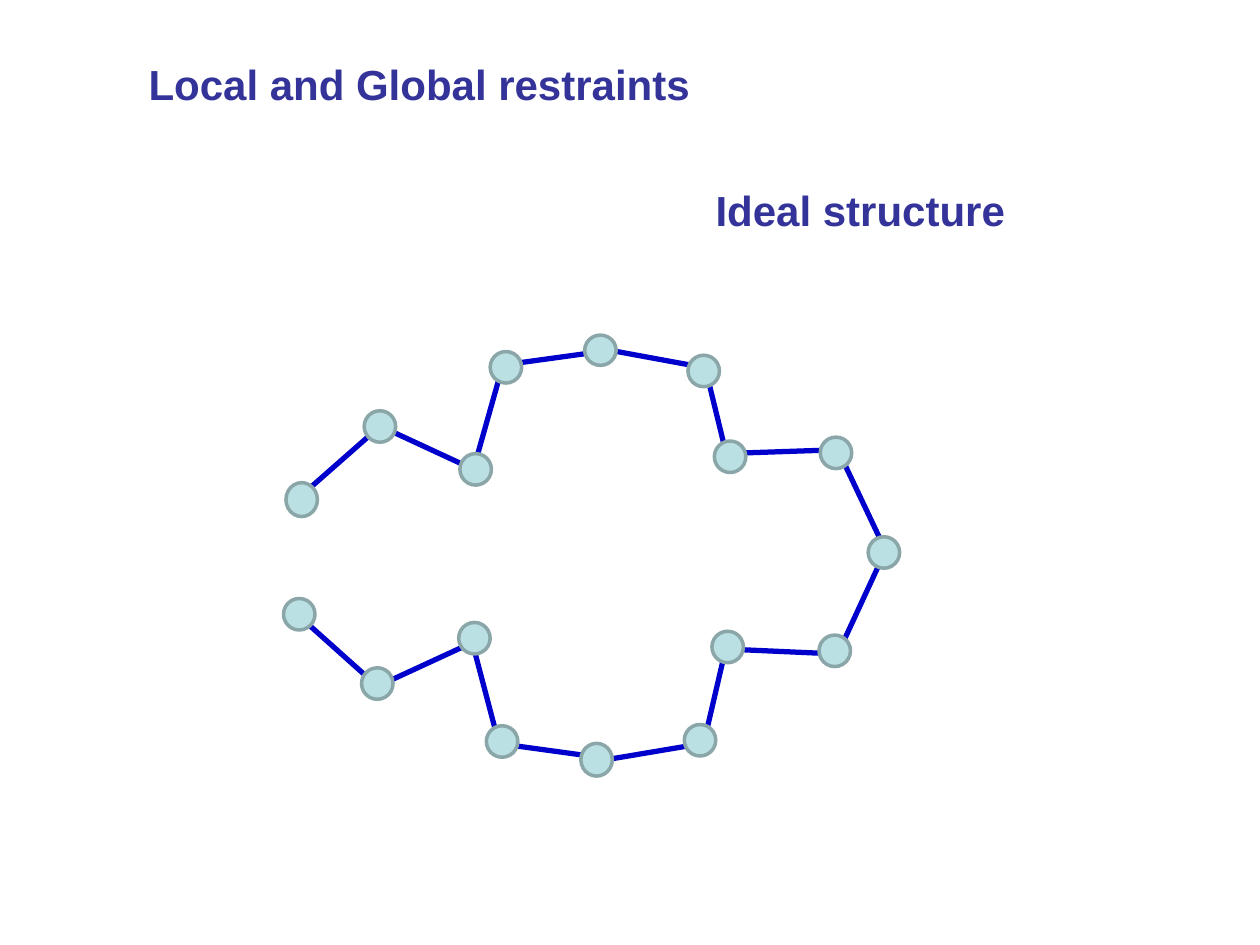
from pptx import Presentation
from pptx.dml.color import RGBColor
from pptx.enum.shapes import MSO_CONNECTOR, MSO_SHAPE
from pptx.enum.text import MSO_AUTO_SIZE
from pptx.oxml.ns import qn
from pptx.util import Pt
from lxml.etree import SubElement

# Labels: text, left, top, width, height
LABELS = [
    ("Local and Global restraints", 77.8, 30.2, 372.2, 36),
    ("Ideal structure", 401.8, 102.2, 198, 36),
]

# Beads of each strand: left, top, height
LOWER = [
    (162, 342, 18), (206.6, 381.6, 18), (262.1, 355.7, 18),
    (277.9, 414.7, 18), (331.9, 424.8, 18.7), (391, 414, 18),
    (406.8, 360.7, 18), (468, 362.9, 18),
]
UPPER = [
    (163.4, 275.8, 19.4), (208.1, 234.7, 18), (262.8, 259.2, 18),
    (280.1, 200.9, 18), (334.1, 191.5, 17.3), (393.1, 203, 18),
    (408.2, 252, 18), (468.7, 249.8, 18), (496.1, 306.7, 18),
]

# Bonds of each strand: start x, y, end x, y
BONDS = [
    (168.5, 349.9, 216, 392.4), (213.8, 393.1, 271.4, 366.5),
    (268.6, 362.2, 285.1, 424.8), (284.4, 424.8, 347, 433.4),
    (337.7, 435.6, 401.8, 424.8), (401.8, 426.2, 416.2, 364.3),
    (413.3, 370.8, 478.1, 373.7), (477.4, 376.6, 504, 319),
    (169.2, 285.8, 217.4, 243.4), (213.8, 241.9, 271.4, 268.6),
    (270, 270, 287.3, 208.8), (285.8, 208.8, 348.5, 200.2),
    (340.6, 198.7, 403.2, 210.2), (402.5, 208.1, 417.6, 270),
    (414, 259.2, 478.8, 257), (478.1, 255.6, 505.4, 313.2),
]

THEME = {
    "font": "Arial", "size": Pt(24),
    "text": RGBColor(0x33, 0x33, 0x99),
    "bond": RGBColor(0x00, 0x00, 0xCC), "bond_w": Pt(3),
    "bead": RGBColor(0xBB, 0xE0, 0xE3), "bead_d": 18,
    "rim": RGBColor(0x8A, 0xA6, 0xA8), "rim_w": Pt(2),
}


def add_label(slide, text, *box):
    frame = slide.shapes.add_textbox(*map(Pt, box)).text_frame
    frame.word_wrap = True
    frame.auto_size = MSO_AUTO_SIZE.SHAPE_TO_FIT_TEXT
    frame.text = text
    font = frame.paragraphs[0].runs[0].font
    font.name, font.size, font.bold = THEME["font"], THEME["size"], True
    font.color.rgb = THEME["text"]


def add_bond(slide, *ends):
    bond = slide.shapes.add_connector(MSO_CONNECTOR.STRAIGHT, *map(Pt, ends))
    bond.line.color.rgb = THEME["bond"]
    bond.line.width = THEME["bond_w"]
    SubElement(bond._element.spPr, qn("a:effectLst"))


def add_bead(slide, left, top, high):
    box = map(Pt, (left, top, THEME["bead_d"], high))
    bead = slide.shapes.add_shape(MSO_SHAPE.OVAL, *box)
    bead.shadow.inherit = False
    bead.fill.solid()
    bead.fill.fore_color.rgb = THEME["bead"]
    bead.line.color.rgb = THEME["rim"]
    bead.line.width = THEME["rim_w"]


def main():
    deck = Presentation()
    deck.slide_width, deck.slide_height = Pt(720), Pt(540)
    slide = deck.slides.add_slide(deck.slide_layouts[6])

    # Bonds go beneath the beads
    for bond in BONDS:
        add_bond(slide, *bond)
    for bead in LOWER + UPPER:
        add_bead(slide, *bead)

    # Title and caption
    for label in LABELS:
        add_label(slide, *label)

    deck.save("out.pptx")


if __name__ == "__main__":
    main()
